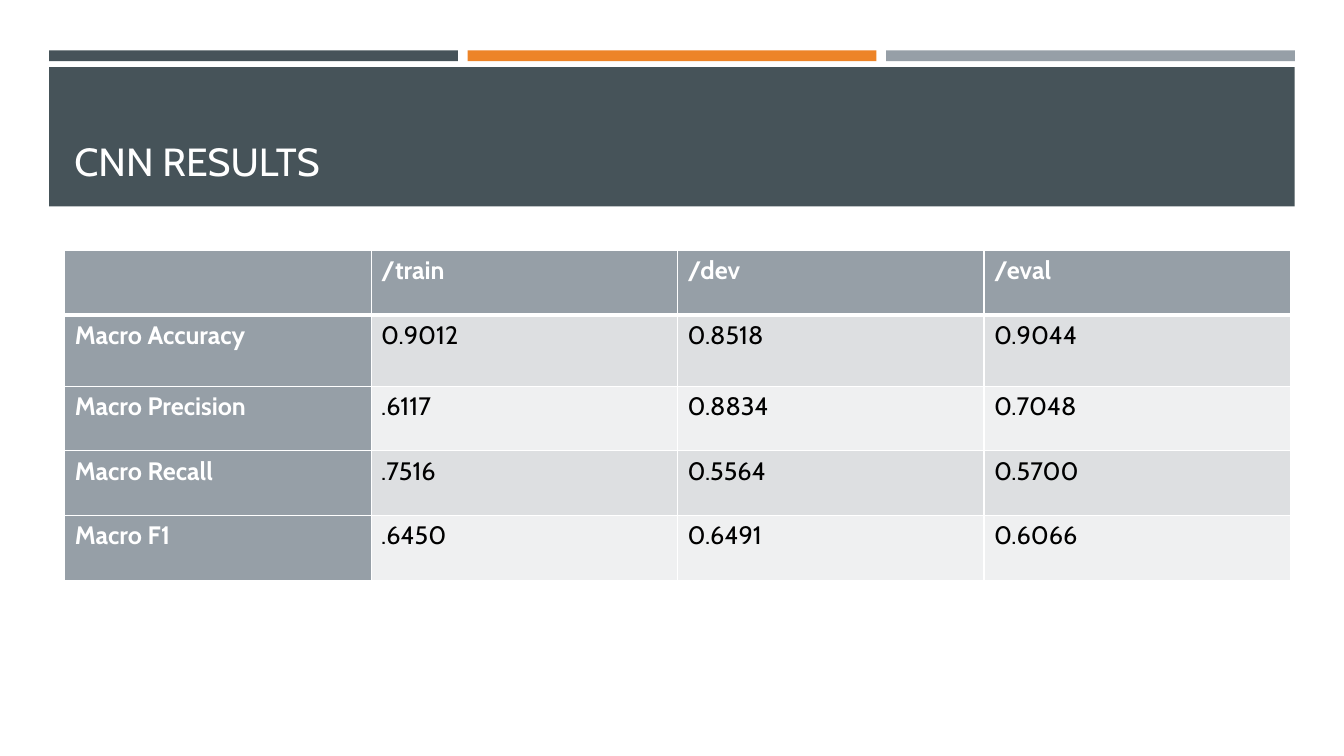
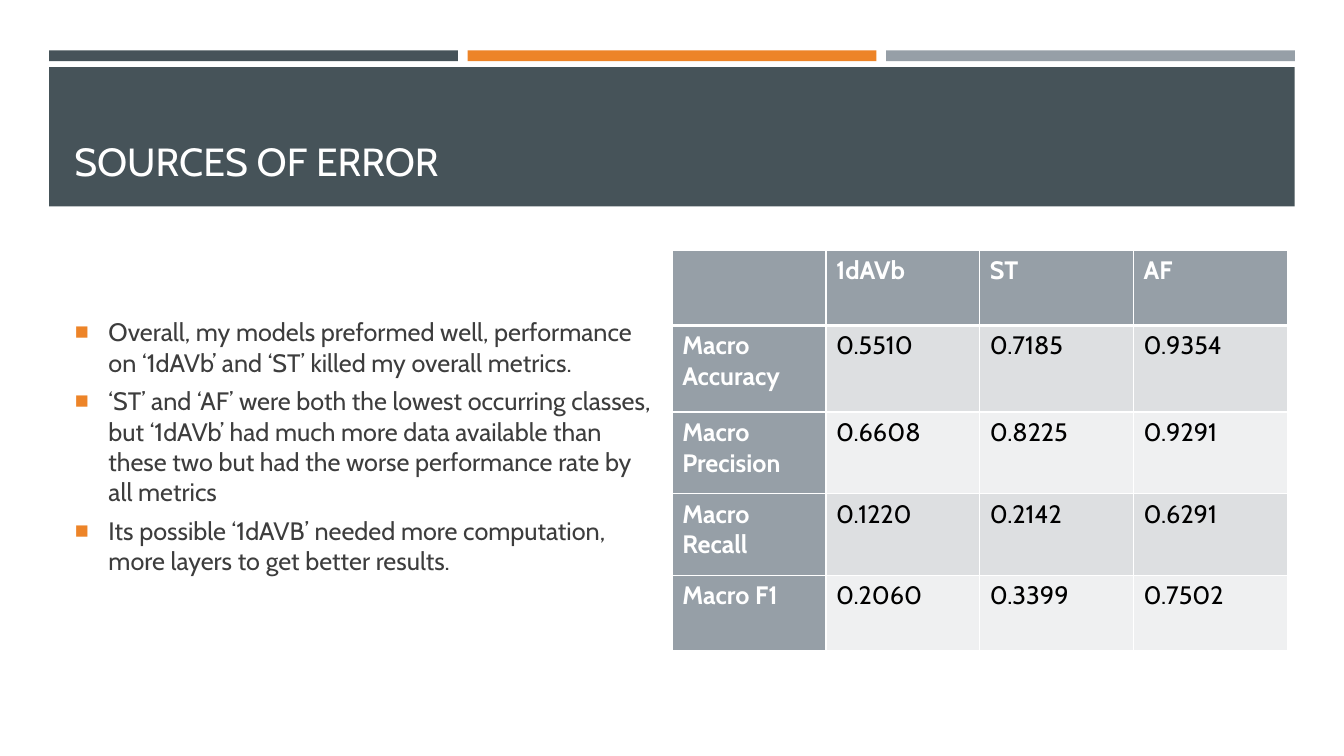
from lxml import etree
from pptx import Presentation
from pptx.dml.color import RGBColor
from pptx.enum import shapes, text
from pptx.oxml import ns
from pptx.util import Cm, Pt

FONT = "Cabin"
SLATE = RGBColor(0x46, 0x53, 0x59)
ORANGE = RGBColor(0xED, 0x84, 0x28)
GREY = RGBColor(0x96, 0x9F, 0xA7)
DARK_STRIPE = RGBColor(0xDD, 0xDF, 0xE1)
LIGHT_STRIPE = RGBColor(0xEF, 0xF0, 0xF1)
BODY_INK = RGBColor(0x3D, 0x3D, 0x3D)
BLACK = RGBColor(0, 0, 0)
WHITE = RGBColor(0xFF, 0xFF, 0xFF)

METRICS = ["Macro Accuracy", "Macro Precision", "Macro Recall", "Macro F1"]
CNN_SCORES = {
    "/train": ["0.9012", ".6117", ".7516", ".6450"],
    "/dev": ["0.8518", "0.8834", "0.5564", "0.6491"],
    "/eval": ["0.9044", "0.7048", "0.5700", "0.6066"],
}
CLASS_SCORES = {
    "1dAVb": ["0.5510", "0.6608", "0.1220", "0.2060"],
    "ST": ["0.7185", "0.8225", "0.2142", "0.3399"],
    "AF": ["0.9354", "0.9291", "0.6291", "0.7502"],
}
ERROR_SOURCES = [
    "Overall, my models preformed well, performance on ‘1dAVb’ and ‘ST’ "
    "killed my overall metrics.",
    "‘ST’ and ‘AF’ were both the lowest occurring classes, but ‘1dAVb’ had "
    "much more data available than these two but had the worse performance "
    "rate by all metrics",
    "Its possible ‘1dAVB’ needed more computation, more layers to get better "
    "results.",
]


def write_text(paragraph, words, size=18, color=BLACK, bold=False, after=0):
    paragraph.alignment = text.PP_ALIGN.LEFT
    paragraph.space_before = Pt(0)
    paragraph.space_after = Pt(after)
    run = paragraph.add_run()
    run.text = words
    run.font.name = FONT
    run.font.size = Pt(size)
    run.font.bold = bold
    run.font.color.rgb = color


def add_child(parent, tag, **attributes):
    return etree.SubElement(parent, ns.qn(tag), attributes)


def add_bullet(paragraph, indent):
    properties = paragraph._p.get_or_add_pPr()
    properties.set("marL", str(indent))
    properties.set("indent", str(-indent))
    bullet_color = add_child(properties, "a:buClr")
    add_child(bullet_color, "a:srgbClr", val=str(ORANGE))
    add_child(properties, "a:buSzPct", val="92000")
    add_child(properties, "a:buChar", char="■")


def set_borders(cell, top, bottom):
    properties = cell._tc.get_or_add_tcPr()
    for side, points in (("L", 1), ("R", 1), ("T", top), ("B", bottom)):
        line = add_child(properties, f"a:ln{side}", w=str(Pt(points)))
        fill = add_child(line, "a:solidFill")
        add_child(fill, "a:srgbClr", val=str(WHITE))


def place(placeholder, left, top, width, height, anchor):
    placeholder.left, placeholder.top = left, top
    placeholder.width, placeholder.height = width, height
    frame = placeholder.text_frame
    frame.auto_size = text.MSO_AUTO_SIZE.NONE
    frame.word_wrap = True
    frame.vertical_anchor = anchor
    return frame


def add_header(slide, title, left, top, width):
    gap = Cm(0.25)
    stripe = (width - 2 * gap) // 3
    bands = [
        (left + i * (stripe + gap), top, stripe, Cm(0.27), color)
        for i, color in enumerate((SLATE, ORANGE, GREY))
    ]
    bands.append((left, top + Cm(0.42), width, Cm(3.51), SLATE))
    for *box, color in bands:
        band = slide.shapes.add_shape(shapes.MSO_SHAPE.RECTANGLE, *box)
        band.shadow.inherit = False
        band.fill.solid()
        band.fill.fore_color.rgb = color
        band.line.fill.background()
        slide.shapes.title._element.addprevious(band._element)
    frame = place(slide.shapes.title, left + Cm(0.38), top + Cm(0.76),
                  width - Cm(0.76), Cm(2.74), text.MSO_ANCHOR.BOTTOM)
    write_text(frame.paragraphs[0], title, size=28, color=WHITE)


def add_scores(slide, scores, left, top, width, row_heights):
    header = ["", *scores]
    rows = [header, *zip(METRICS, *scores.values())]
    table = slide.shapes.add_table(len(rows), len(header), left, top, width,
                                   sum(row_heights)).table
    table.first_col = True
    table.horz_banding = False
    for row, height in zip(table.rows, row_heights):
        row.height = height
    for r, values in enumerate(rows):
        for c, value in enumerate(values):
            cell = table.cell(r, c)
            heading = r == 0 or c == 0
            set_borders(cell, 3 if r == 1 else 1, 3 if r == 0 else 1)
            cell.fill.solid()
            stripe = DARK_STRIPE if r % 2 else LIGHT_STRIPE
            cell.fill.fore_color.rgb = GREY if heading else stripe
            if value:
                write_text(cell.text_frame.paragraphs[0], value, bold=heading,
                           color=WHITE if heading else BLACK)


def add_points(slide, points, left, top, width, height):
    frame = place(slide.placeholders[1], left, top, width, height,
                  text.MSO_ANCHOR.MIDDLE)
    for i, point in enumerate(points):
        paragraph = frame.add_paragraph() if i else frame.paragraphs[0]
        add_bullet(paragraph, Cm(0.85))
        write_text(paragraph, point, color=BODY_INK, after=6)


def add_slide(deck, layout, title):
    slide = deck.slides.add_slide(deck.slide_layouts.get_by_name(layout))
    add_header(slide, title, Cm(1.24), Cm(1.27), Cm(31.39))
    return slide


def main():
    deck = Presentation()
    deck.slide_width, deck.slide_height = Cm(33.87), Cm(19.05)

    results = add_slide(deck, "Title Only", "CNN RESULTS")
    add_scores(results, CNN_SCORES, Cm(1.63), Cm(6.3), Cm(30.89),
               [Cm(h) for h in (1.63, 1.8, 1.63, 1.63, 1.63)])

    errors = add_slide(deck, "Title and Content", "SOURCES OF ERROR")
    add_points(errors, ERROR_SOURCES, Cm(1.63), Cm(6.2), Cm(15.06), Cm(10.08))
    add_scores(errors, CLASS_SCORES, Cm(16.94), Cm(6.3), Cm(15.5),
               [Cm(h) for h in (1.9, 2.18, 2.06, 2.06, 1.9)])

    deck.save("out.pptx")


if __name__ == "__main__":
    main()
